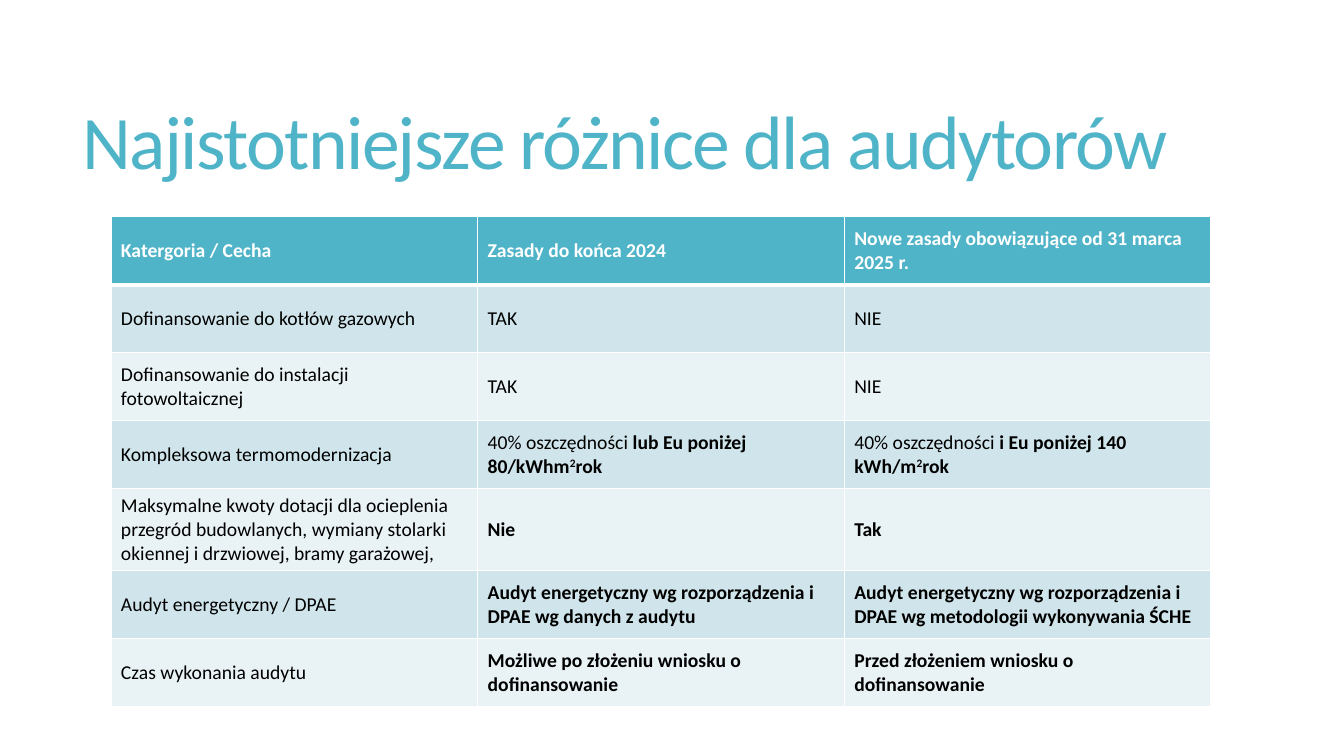
from lxml.etree import SubElement
from pptx import Presentation
from pptx.dml.color import RGBColor
from pptx.enum.text import MSO_ANCHOR, MSO_AUTO_SIZE, PP_ALIGN
from pptx.oxml.ns import qn
from pptx.util import Inches, Pt

TITLE = "Najistotniejsze różnice dla audytorów"
PLAIN, BOLD, RAISED = "plain", "bold", "raised"
ROWS = [
    [[("Katergoria / Cecha", BOLD)],
     [("Zasady do końca 2024", BOLD)],
     [("Nowe zasady obowiązujące od 31 marca 2025 r.", BOLD)]],
    [[("Dofinansowanie do kotłów gazowych", PLAIN)],
     [("TAK", PLAIN)],
     [("NIE", PLAIN)]],
    [[("Dofinansowanie do instalacji fotowoltaicznej", PLAIN)],
     [("TAK", PLAIN)],
     [("NIE", PLAIN)]],
    [[("Kompleksowa termomodernizacja", PLAIN)],
     [("40% oszczędności ", PLAIN), ("lub Eu poniżej 80/kWhm", BOLD),
      ("2", RAISED), ("rok", BOLD)],
     [("40% oszczędności ", PLAIN), ("i Eu poniżej 140 kWh/m", BOLD),
      ("2", RAISED), ("rok", BOLD)]],
    [[("Maksymalne kwoty dotacji dla ocieplenia przegród budowlanych, "
       "wymiany stolarki okiennej i drzwiowej, bramy garażowej,", PLAIN)],
     [("Nie", BOLD)],
     [("Tak", BOLD)]],
    [[("Audyt energetyczny / DPAE", PLAIN)],
     [("Audyt energetyczny wg rozporządzenia i DPAE wg danych z audytu", BOLD)],
     [("Audyt energetyczny wg rozporządzenia i DPAE wg metodologii "
       "wykonywania ŚCHE", BOLD)]],
    [[("Czas wykonania audytu", PLAIN)],
     [("Możliwe po złożeniu wniosku o dofinansowanie", BOLD)],
     [("Przed złożeniem wniosku o dofinansowanie", BOLD)]],
]
COLORS = {"accent": "50B4C8", "odd": "D0E5EB", "even": "E9F2F5",
          "text": "000000", "white": "FFFFFF"}
FONT = "Calibri"
COLUMN_WIDTH, ROW_HEIGHT, TALL_ROW_HEIGHT, TALL_ROW = 3.637, 0.675, 0.81, 4


def add_span(para, text, size, color, style=PLAIN):
    span = para.add_run()
    span.text = text
    span.font.name = FONT
    span.font.size = Pt(size)
    span.font.bold = style != PLAIN
    span.font.color.rgb = RGBColor.from_string(COLORS[color])
    if style == RAISED:
        span.font._element.set("baseline", "30000")
    return span


def add_borders(cell, bottom_width):
    properties = cell._tc.get_or_add_tcPr()
    for side, width in (("L", 1), ("R", 1), ("T", 1), ("B", bottom_width)):
        line = SubElement(properties, qn(f"a:ln{side}"), w=str(Pt(width)))
        fill = SubElement(line, qn("a:solidFill"))
        SubElement(fill, qn("a:srgbClr"), val=COLORS["white"])


def add_title(page):
    title = page.shapes.title
    title.left, title.top = Inches(0.72), Inches(0.55)
    title.width, title.height = Inches(11.78), Inches(1.81)
    frame = title.text_frame
    frame.word_wrap = True
    frame.auto_size = MSO_AUTO_SIZE.NONE
    frame.vertical_anchor = MSO_ANCHOR.MIDDLE
    para = frame.paragraphs[0]
    para.alignment = PP_ALIGN.LEFT
    para.line_spacing = 0.85
    span = add_span(para, TITLE, 54, "accent")
    span.font._element.set("spc", "-120")


def add_comparison(page):
    column_count = len(ROWS[0])
    table = page.shapes.add_table(
        len(ROWS), column_count, Inches(1.1), Inches(2.15),
        Inches(COLUMN_WIDTH * column_count), Inches(ROW_HEIGHT * len(ROWS))).table
    for column in table.columns:
        column.width = Inches(COLUMN_WIDTH)
    for row_index, row in enumerate(ROWS):
        header = row_index == 0
        band = "accent" if header else "odd" if row_index % 2 else "even"
        height = TALL_ROW_HEIGHT if row_index == TALL_ROW else ROW_HEIGHT
        table.rows[row_index].height = Inches(height)
        for column_index, spans in enumerate(row):
            cell = table.cell(row_index, column_index)
            add_borders(cell, 3 if header else 1)
            cell.fill.solid()
            cell.fill.fore_color.rgb = RGBColor.from_string(COLORS[band])
            cell.vertical_anchor = MSO_ANCHOR.MIDDLE
            para = cell.text_frame.paragraphs[0]
            for text, style in spans:
                add_span(para, text, 14, "white" if header else "text", style)


def main():
    deck = Presentation()
    deck.slide_width, deck.slide_height = Inches(13.33), Inches(7.5)
    page = deck.slides.add_slide(deck.slide_layouts[5])
    add_title(page)
    add_comparison(page)
    deck.save("out.pptx")


if __name__ == "__main__":
    main()
